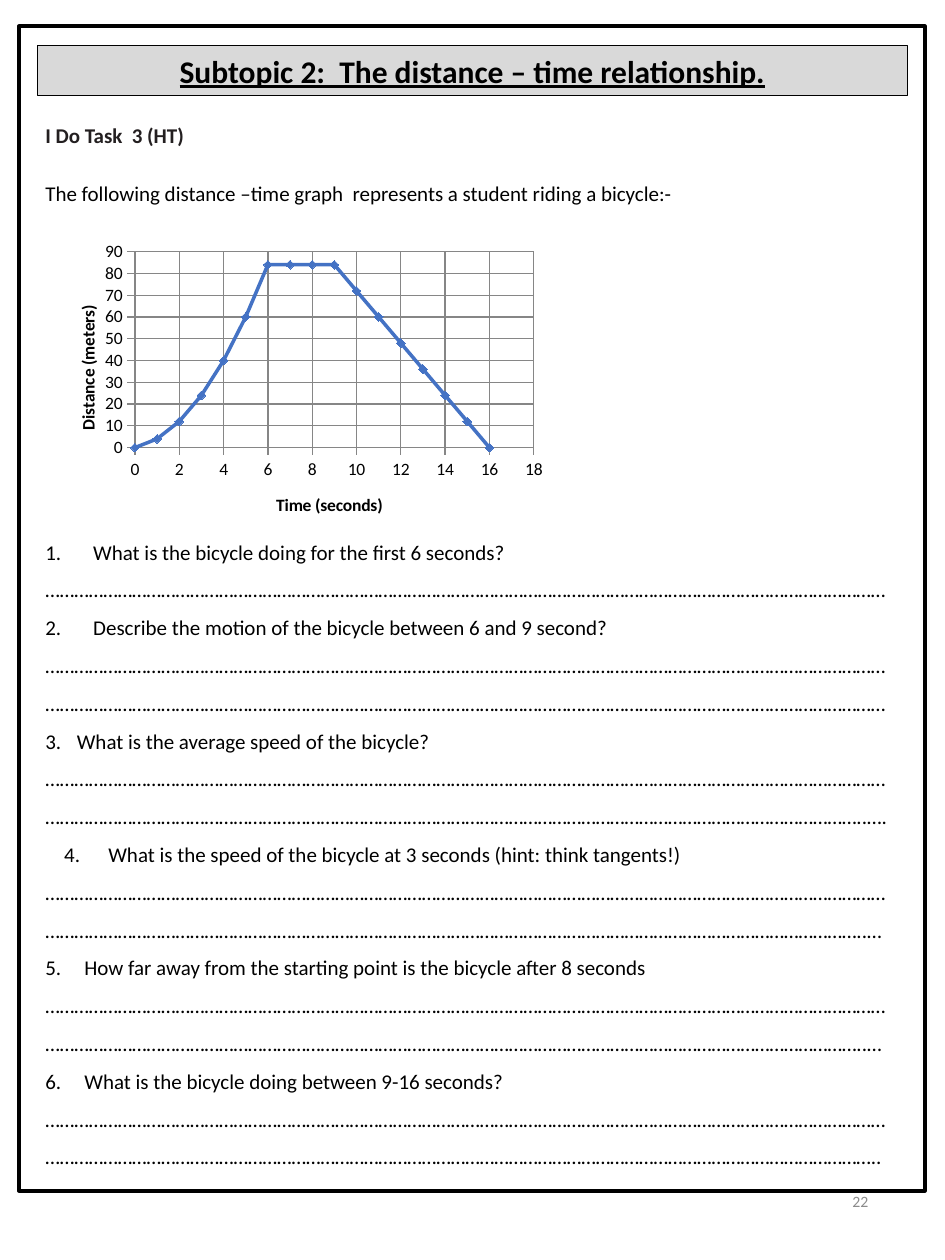
from lxml import etree
from pptx import Presentation
from pptx.chart.data import XyChartData
from pptx.dml.color import RGBColor
from pptx.enum.chart import XL_CHART_TYPE as ChartType, XL_MARKER_STYLE as Marker, XL_TICK_MARK as Tick
from pptx.enum.shapes import MSO_SHAPE as Shape
from pptx.enum.text import MSO_ANCHOR as Anchor, MSO_AUTO_SIZE as AutoSize, PP_ALIGN as Align
from pptx.oxml import parse_xml
from pptx.oxml.ns import nsdecls, qn
from pptx.util import Inches, Pt

BLACK = RGBColor(0, 0, 0)
HEADING = RGBColor(0x23, 0x1F, 0x20)
BANNER = RGBColor(0xD9, 0xD9, 0xD9)
GREY = RGBColor(0x8C, 0x8C, 0x8C)
GRID = RGBColor(0x86, 0x86, 0x86)
BLUE = RGBColor(0x44, 0x72, 0xC4)
FONT = "Calibri"

DISTANCES = [0, 4, 12, 24, 40, 60, 84, 84, 84, 84, 72, 60, 48, 36, 24, 12, 0]
LINE = "…" * 58
SHORT = "…" * 56 + "..…"
QUESTIONS = [
    ("What is the bicycle doing for the first 6 seconds?", 0.38, 0.38, [LINE]),
    ("Describe the motion of the bicycle between 6 and 9 second?", 0.38, 0.38, [LINE, LINE]),
    ("What is the average speed of the bicycle?", 0.25, 0.25, [LINE, SHORT + "."]),
    ("What is the speed of the bicycle at 3 seconds (hint: think tangents!)", 0.5, 0.35, [LINE, SHORT]),
    ("How far away from the starting point is the bicycle after 8 seconds", 0.31, 0.31, [LINE, SHORT]),
    ("What is the bicycle doing between 9-16 seconds?", 0.31, 0.31, [LINE, "…" * 57 + ".."]),
]


def place(s, left, top, width, height):
    s.left, s.top = Inches(left), Inches(top)
    s.width, s.height = Inches(width), Inches(height)


def write(p, text, size=12, color=BLACK, bold=False, underline=False, align=Align.LEFT,
          spacing=1.0, before=0, after=0):
    p.alignment, p.line_spacing = align, spacing
    p.space_before, p.space_after = Pt(before), Pt(after)
    r = p.add_run()
    r.text = text
    f = r.font
    f.name, f.size, f.bold, f.underline = FONT, Pt(size), bold, underline
    f.color.rgb = color


def set_bullet(p, number=None, left=0, hang=0):
    pPr = p._p.get_or_add_pPr()
    pPr.set("marL", str(Inches(left)))
    pPr.set("indent", str(-Inches(hang)))
    if number is None:
        etree.SubElement(pPr, qn("a:buNone"))
    else:
        etree.SubElement(pPr, qn("a:buFont"), typeface="+mj-lt")
        etree.SubElement(pPr, qn("a:buAutoNum"), type="arabicPeriod", startAt=str(number))


def add_frame(slide):
    s = slide.shapes.add_shape(Shape.RECTANGLE, Inches(0.15), Inches(0.21), Inches(7.19), Inches(9.24))
    s.shadow.inherit = False
    s.fill.background()
    s.line.color.rgb, s.line.width = BLACK, Pt(2.25)
    slide.shapes._spTree.insert(2, s._element)


def fill_title(s):
    place(s, 0.3, 0.36, 6.9, 0.4)
    s.fill.solid()
    s.fill.fore_color.rgb = BANNER
    s.line.color.rgb, s.line.width = BLACK, Pt(0.75)
    tf = s.text_frame
    tf.auto_size, tf.vertical_anchor = AutoSize.NONE, Anchor.TOP
    write(tf.paragraphs[0], "Subtopic 2:  The distance – time relationship.",
          size=18, bold=True, underline=True, align=Align.CENTER)


def fill_body(s):
    place(s, 0.26, 0.92, 6.9, 9.11)
    tf = s.text_frame
    tf.auto_size, tf.vertical_anchor = AutoSize.NONE, Anchor.TOP

    def add_line(text, bullet=(), **style):
        p = tf.add_paragraph()
        write(p, text, **style)
        set_bullet(p, *bullet)

    write(tf.paragraphs[0], "I Do Task  3 (HT)", color=HEADING, bold=True)
    set_bullet(tf.paragraphs[0])
    add_line("The following distance –time graph  represents a student riding a bicycle:-",
             spacing=1.15, before=17, after=10)
    for number, (question, left, hang, answers) in enumerate(QUESTIONS, 1):
        add_line(question, (number, left, hang), spacing=1.5, before=173 if number == 1 else 0)
        for answer in answers:
            add_line(answer, spacing=1.5)


def set_layout(parent, index, inner=False, **values):
    for old in parent.findall(qn("c:layout")):
        parent.remove(old)
    target = '<c:layoutTarget val="inner"/>' if inner else ""
    modes = "".join(f'<c:{k}Mode val="edge"/>' for k in "xy")
    sizes = "".join(f'<c:{k} val="{v}"/>' for k, v in values.items())
    parent.insert(index, parse_xml(
        f'<c:layout {nsdecls("c")}><c:manualLayout>{target}{modes}{sizes}</c:manualLayout></c:layout>'))


def format_axis(axis, title, maximum, unit, x, y):
    axis.minimum_scale, axis.maximum_scale, axis.major_unit = 0, maximum, unit
    axis.major_tick_mark, axis.minor_tick_mark = Tick.OUTSIDE, Tick.NONE
    axis.has_major_gridlines = True
    for line in (axis.format.line, axis.major_gridlines.format.line):
        line.color.rgb, line.width = GRID, Pt(0.75)
    write(axis.axis_title.text_frame.paragraphs[0], title, size=10, bold=True, align=Align.CENTER)
    set_layout(axis.axis_title._element, 1, x=x, y=y)


def add_graph(slide):
    data = XyChartData()
    series = data.add_series("Series 1")
    for time, distance in enumerate(DISTANCES):
        series.add_data_point(time, distance)
    chart = slide.shapes.add_chart(ChartType.XY_SCATTER_LINES, Inches(0.34), Inches(1.92),
                                   Inches(4.06), Inches(2.32), data).chart
    chart.has_legend = chart.has_title = False
    chart.font.name, chart.font.size, chart.font.color.rgb = FONT, Pt(10), BLACK
    plot = chart.plots[0]
    plot.vary_by_categories = False
    set_layout(chart._chartSpace.chart.plotArea, 0, inner=True, x=0.18, y=0.02, w=0.78, h=0.68)
    format_axis(chart.category_axis, "Time (seconds)", 18, 2, 0.45, 0.85)
    format_axis(chart.value_axis, "Distance (meters)", 90, 10, 0.06, 0.2)
    line = plot.series[0]
    line.smooth = False
    line.format.line.color.rgb, line.format.line.width = BLUE, Pt(2)
    marker = line.marker
    marker.style, marker.size = Marker.DIAMOND, 5
    marker.format.fill.solid()
    marker.format.fill.fore_color.rgb = BLUE
    marker.format.line.color.rgb = BLUE


def add_page_number(slide):
    tf = slide.shapes.add_textbox(Inches(5.3), Inches(9.27), Inches(1.69), Inches(0.53)).text_frame
    tf.word_wrap, tf.vertical_anchor = True, Anchor.MIDDLE
    write(tf.paragraphs[0], "22", size=9, color=GREY, align=Align.RIGHT)


def main():
    prs = Presentation()
    prs.slide_width, prs.slide_height = Inches(7.5), Inches(10)
    slide = prs.slides.add_slide(prs.slide_layouts[1])
    add_frame(slide)
    fill_title(slide.shapes.title)
    fill_body(slide.placeholders[1])
    add_graph(slide)
    add_page_number(slide)
    prs.save("out.pptx")


if __name__ == "__main__":
    main()
